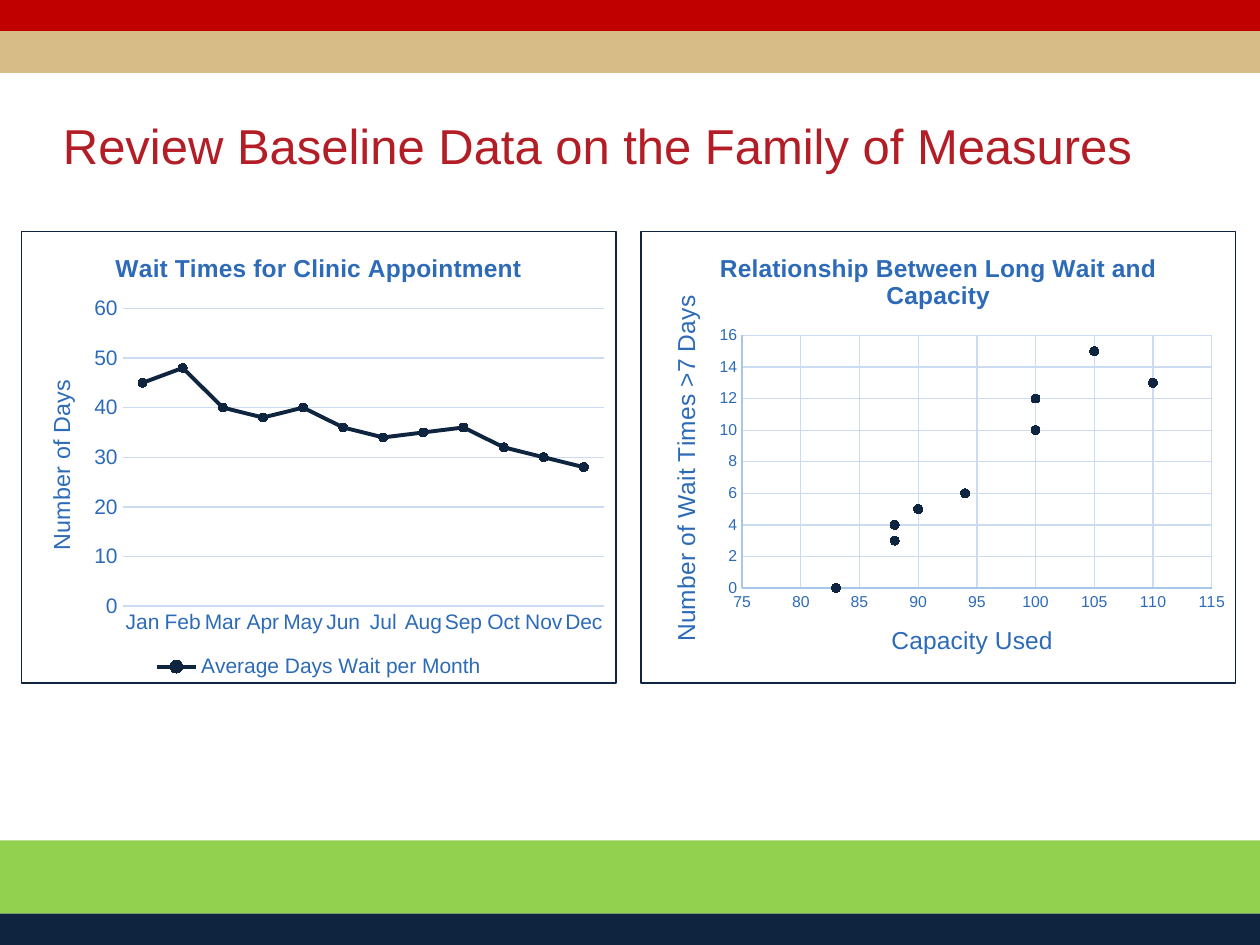
from dataclasses import dataclass

from lxml.etree import SubElement
from pptx import Presentation
from pptx.chart.data import CategoryChartData, XyChartData
from pptx.dml.color import RGBColor as RGB
from pptx.enum.chart import XL_CHART_TYPE as CT, XL_LEGEND_POSITION as LP
from pptx.enum.chart import XL_MARKER_STYLE as MS, XL_TICK_MARK as TM
from pptx.enum.shapes import MSO_SHAPE
from pptx.oxml import parse_xml
from pptx.oxml.ns import nsdecls, qn
from pptx.util import Cm, Pt


@dataclass(frozen=True)
class Theme:
    """Colours, font and type sizes of the slide."""
    font: str = "Arial"
    navy: str = "0F243E"
    green: str = "92D050"
    red: str = "C00000"
    tan: str = "D7BC87"
    heading: str = "B31D26"
    label: str = "2D6BB8"
    grid: str = "CBDCF2"
    axis: str = "A8C5EA"
    heading_size: float = 28
    chart_title: float = 14
    line_axis_title: float = 13.3
    scatter_axis_title: float = 14
    line_labels: float = 12
    scatter_labels: float = 9


T = Theme()
MONTHS = ["Jan", "Feb", "Mar", "Apr", "May", "Jun",
          "Jul", "Aug", "Sep", "Oct", "Nov", "Dec"]
WAIT_DAYS = [45, 48, 40, 38, 40, 36, 34, 35, 36, 32, 30, 28]
CAPACITY_WAITS = [(83, 0), (88, 3), (88, 4), (90, 5), (94, 6),
                  (100, 10), (110, 13), (105, 15), (100, 12)]


def style_font(font, size, color, bold=False):
    """Apply the theme font with a size and colour."""
    font.name, font.size, font.bold = T.font, Pt(size), bold
    font.color.rgb = RGB.from_string(color)


def style_line(line, color, width=0.75):
    """Give a line a solid colour and width."""
    line.color.rgb = RGB.from_string(color)
    line.width = Pt(width)


def add_bands(slide, left, top, width, bands):
    """Stack full-width colour bands downward from a corner."""
    for color, height in bands:
        sp = slide.shapes.add_shape(MSO_SHAPE.RECTANGLE, Cm(left), Cm(top),
                                    Cm(width), Cm(height))
        sp.shadow.inherit = False
        sp.fill.solid()
        sp.fill.fore_color.rgb = RGB.from_string(color)
        sp.line.fill.background()
        top += height


def add_heading(slide, left, top, width, height, text):
    """Place the slide heading in its box."""
    tf = slide.shapes.add_textbox(Cm(left), Cm(top), Cm(width), Cm(height)).text_frame
    tf.word_wrap = True
    tf.margin_left = tf.margin_right = 0
    p = tf.paragraphs[0]
    p.line_spacing = 0.9
    r = p.add_run()
    r.text = text
    style_font(r.font, T.heading_size, T.heading)


def set_title(owner, text, size, bold=False):
    """Write the title of a chart or an axis."""
    title = owner.chart_title if hasattr(owner, "chart_title") else owner.axis_title
    r = title.text_frame.paragraphs[0].add_run()
    r.text = text
    style_font(r.font, size, T.label, bold)


def style_axis(axis, size, line=None, grid=True):
    """Set labels, line and gridlines of an axis."""
    axis.major_tick_mark = axis.minor_tick_mark = TM.NONE
    style_font(axis.tick_labels.font, size, T.label)
    if line:
        style_line(axis.format.line, line)
    else:
        axis.format.line.fill.background()
    axis.has_major_gridlines = grid
    if grid:
        style_line(axis.major_gridlines.format.line, T.grid)


def set_plot_box(chart, x, y, w, h):
    """Fix the inner plot area as fractions of the chart."""
    area = chart._chartSpace.chart.plotArea
    for old in area.findall(qn("c:layout")):
        area.remove(old)
    layout = parse_xml(f"<c:layout {nsdecls('c')}/>")
    manual = SubElement(layout, qn("c:manualLayout"))
    settings = dict(layoutTarget="inner", xMode="edge", yMode="edge", x=x, y=y, w=w, h=h)
    for tag, val in settings.items():
        SubElement(manual, qn(f"c:{tag}")).set("val", str(val))
    area.insert(0, layout)


def add_chart(slide, box, kind, data, title, plot_box):
    """Add a bordered chart with a title and round navy markers."""
    chart = slide.shapes.add_chart(kind, *map(Cm, box), data).chart
    style_font(chart.font, 10, T.navy)
    set_title(chart, title, T.chart_title, True)
    chart.chart_title.include_in_layout = False
    set_plot_box(chart, *plot_box)
    chart._chartSpace.chart.addnext(parse_xml(
        f'<c:spPr {nsdecls("c", "a")}><a:noFill/><a:ln w="9525"><a:solidFill>'
        f'<a:srgbClr val="{T.navy}"/></a:solidFill></a:ln></c:spPr>'))
    chart.plots[0].vary_by_categories = False
    marker = chart.series[0].marker if hasattr(chart, "series") else chart.plots[0].series[0].marker
    marker.style, marker.size = MS.CIRCLE, 5
    marker.format.fill.solid()
    marker.format.fill.fore_color.rgb = RGB.from_string(T.navy)
    style_line(marker.format.line, T.navy)
    return chart


def add_wait_chart(slide, *box):
    """Draw the monthly wait line chart."""
    data = CategoryChartData()
    data.categories = MONTHS
    data.add_series("Average Days Wait per Month", WAIT_DAYS)
    chart = add_chart(slide, box, CT.LINE_MARKERS, data,
                      "Wait Times for Clinic Appointment", (0.17, 0.17, 0.81, 0.66))
    s = chart.plots[0].series[0]
    s.smooth = False
    style_line(s.format.line, T.navy, 2.25)
    style_axis(chart.category_axis, T.line_labels, T.grid, grid=False)
    style_axis(chart.value_axis, T.line_labels)
    set_title(chart.value_axis, "Number of Days", T.line_axis_title)
    chart.has_legend = True
    chart.legend.position = LP.BOTTOM
    chart.legend.include_in_layout = False
    style_font(chart.legend.font, T.line_labels, T.label)


def add_capacity_chart(slide, *box):
    """Draw the scatter of long waits against capacity."""
    data = XyChartData()
    points = data.add_series("Series 1")
    for x, y in CAPACITY_WAITS:
        points.add_data_point(x, y)
    chart = add_chart(slide, box, CT.XY_SCATTER, data,
                      "Relationship Between Long Wait and Capacity",
                      (0.17, 0.23, 0.79, 0.56))
    chart.has_legend = False
    chart.plots[0].series[0].format.line.fill.background()
    titles = "Capacity Used", "Number of Wait Times >7 Days"
    for axis, title in zip((chart.category_axis, chart.value_axis), titles):
        style_axis(axis, T.scatter_labels, T.axis)
        set_title(axis, title, T.scatter_axis_title)
    chart.category_axis.minimum_scale = 75


def main():
    """Build and save the slide."""
    prs = Presentation()
    prs.slide_width, prs.slide_height = Cm(25.4), Cm(19.05)
    slide = prs.slides.add_slide(prs.slide_layouts[6])
    add_bands(slide, 0, 0, 25.4, [(T.red, 0.63), (T.tan, 0.84)])
    add_bands(slide, 0, 16.94, 25.4, [(T.green, 1.48), (T.navy, 0.63)])
    add_heading(slide, 1.27, 2.33, 21.9, 1.58,
                "Review Baseline Data on the Family of Measures")
    add_wait_chart(slide, 0.42, 4.66, 12.01, 9.12)
    add_capacity_chart(slide, 12.91, 4.66, 12.01, 9.12)
    prs.save("out.pptx")


if __name__ == "__main__":
    main()
